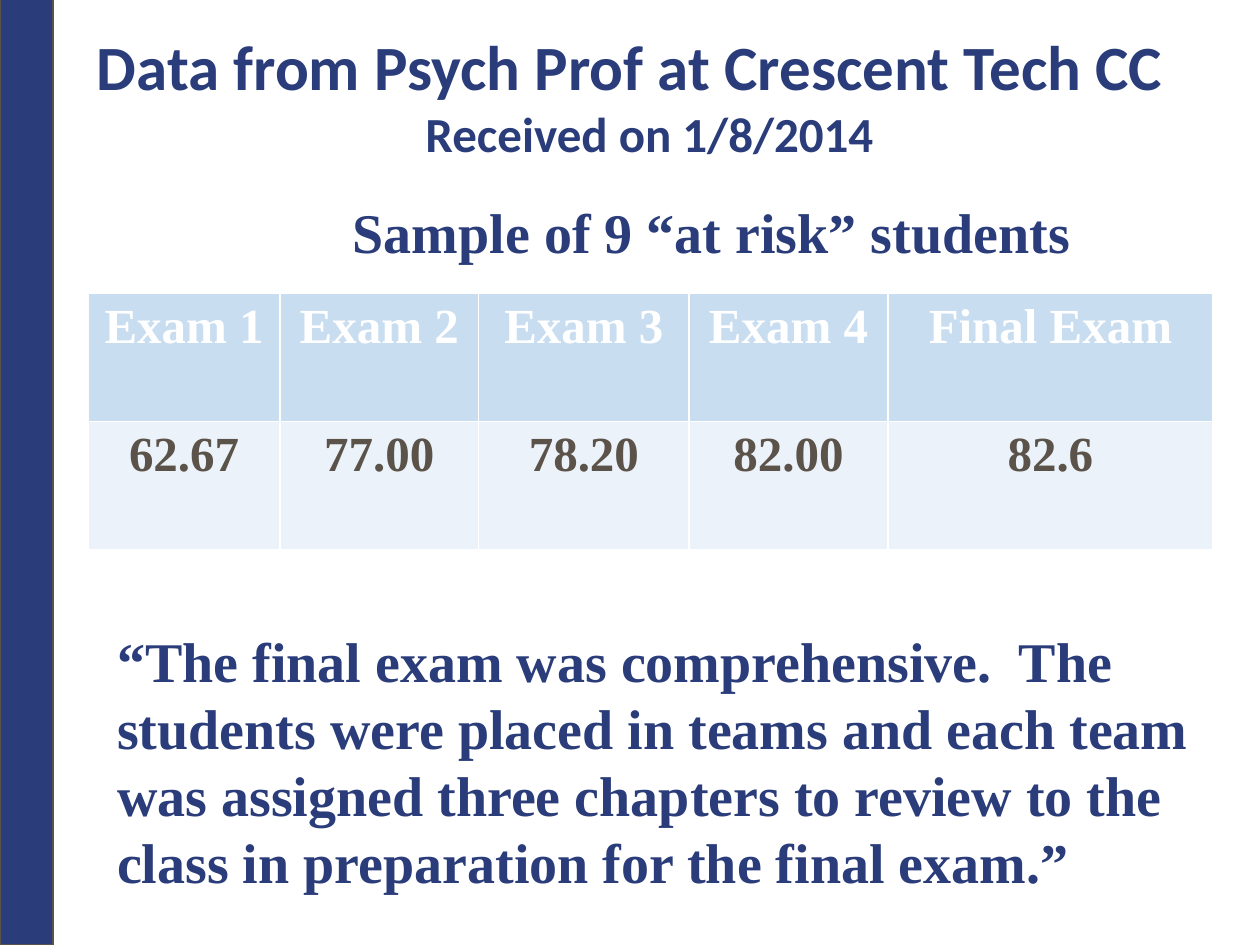
"""Build the slide with exam results for nine at-risk students."""
from pptx import Presentation
from pptx.dml.color import RGBColor
from pptx.enum.shapes import MSO_SHAPE
from pptx.enum.text import MSO_ANCHOR, MSO_AUTO_SIZE, PP_ALIGN
from pptx.util import Cm, Pt

RECTANGLE = MSO_SHAPE.RECTANGLE
TOP = MSO_ANCHOR.TOP
NO_AUTOFIT = MSO_AUTO_SIZE.NONE
LEFT, CENTER = PP_ALIGN.LEFT, PP_ALIGN.CENTER

NAVY, BROWN, WHITE = "2A3D7A", "5B5249", "FFFFFF"
HEADER_BLUE, ROW_BLUE = "C9DDF1", "EBF2FA"
SANS, SERIF = "Calibri", "Times New Roman"
TITLE_ONLY = 5

COLUMN_WIDTHS = [3.86, 4.01, 4.24, 4.01, 6.55]
ROW_HEIGHT = 2.58
EXAM_ROWS = [
    (["Exam 1", "Exam 2", "Exam 3", "Exam 4", "Final Exam"], HEADER_BLUE, WHITE),
    (["62.67", "77.00", "78.20", "82.00", "82.6"], ROW_BLUE, BROWN),
]
QUOTE = (
    "“The final exam was comprehensive.  The students were placed in teams "
    "and each team was assigned three chapters to review to the class in "
    "preparation for the final exam.”"
)


def color(hex_value):
    """Return the colour for a hex string."""
    return RGBColor.from_string(hex_value)


def format_paragraph(paragraph, size, font_name, hex_value, alignment):
    """Set the bold font and the alignment of a paragraph."""
    paragraph.alignment = alignment
    font = paragraph.font
    font.size, font.name, font.bold = Pt(size), font_name, True
    font.color.rgb = color(hex_value)


def prepare_frame(shape):
    """Make a shape's text wrap from the top at a fixed size."""
    frame = shape.text_frame
    frame.word_wrap = True
    frame.auto_size = NO_AUTOFIT
    frame.vertical_anchor = TOP
    return frame


def fill_title(slide):
    """Place the title with its date line."""
    title = slide.shapes.title
    title.left, title.top = Cm(1.7), Cm(0.43)
    title.width, title.height = Cm(22.78), Cm(3)
    frame = prepare_frame(title)
    frame.text = "Data from Psych Prof at Crescent Tech CC\nReceived on 1/8/2014"
    heading, date_line = frame.paragraphs
    format_paragraph(heading, 36, SANS, NAVY, LEFT)
    format_paragraph(date_line, 28, SANS, NAVY, CENTER)


def add_text(slide, text, left, top, width, height, alignment):
    """Add a navy serif text box."""
    box = slide.shapes.add_textbox(Cm(left), Cm(top), Cm(width), Cm(height))
    frame = prepare_frame(box)
    frame.text = text
    format_paragraph(frame.paragraphs[0], 32, SERIF, NAVY, alignment)


def add_exam_table(slide):
    """Add the table of exam averages."""
    table = slide.shapes.add_table(
        len(EXAM_ROWS), len(COLUMN_WIDTHS), Cm(1.78), Cm(5.92),
        Cm(sum(COLUMN_WIDTHS)), Cm(ROW_HEIGHT * len(EXAM_ROWS)),
    ).table
    for column, width in zip(table.columns, COLUMN_WIDTHS):
        column.width = Cm(width)
    for row, (texts, fill_color, text_color) in zip(table.rows, EXAM_ROWS):
        for cell, text in zip(row.cells, texts):
            cell.text = text
            cell.fill.solid()
            cell.fill.fore_color.rgb = color(fill_color)
            paragraph = cell.text_frame.paragraphs[0]
            format_paragraph(paragraph, 28, SERIF, text_color, CENTER)


def add_side_bar(slide):
    """Add the navy bar along the left edge."""
    bar = slide.shapes.add_shape(RECTANGLE, Cm(0), Cm(-0.2), Cm(1.07), Cm(19.25))
    bar.shadow.inherit = False
    bar.fill.solid()
    bar.fill.fore_color.rgb = color(NAVY)
    bar.line.color.rgb = color(BROWN)
    bar.line.width = Pt(0.75)


def main():
    """Build and save the presentation."""
    presentation = Presentation()
    presentation.slide_width, presentation.slide_height = Cm(25.4), Cm(19.05)
    slide = presentation.slides.add_slide(presentation.slide_layouts[TITLE_ONLY])
    fill_title(slide)
    add_exam_table(slide)
    add_text(slide, QUOTE, 2.11, 12.5, 22.78, 6.93, LEFT)
    add_text(slide, "Sample of 9 “at risk” students", 6.83, 3.86, 15.04, 1.63, CENTER)
    add_side_bar(slide)
    presentation.save("out.pptx")


if __name__ == "__main__":
    main()
